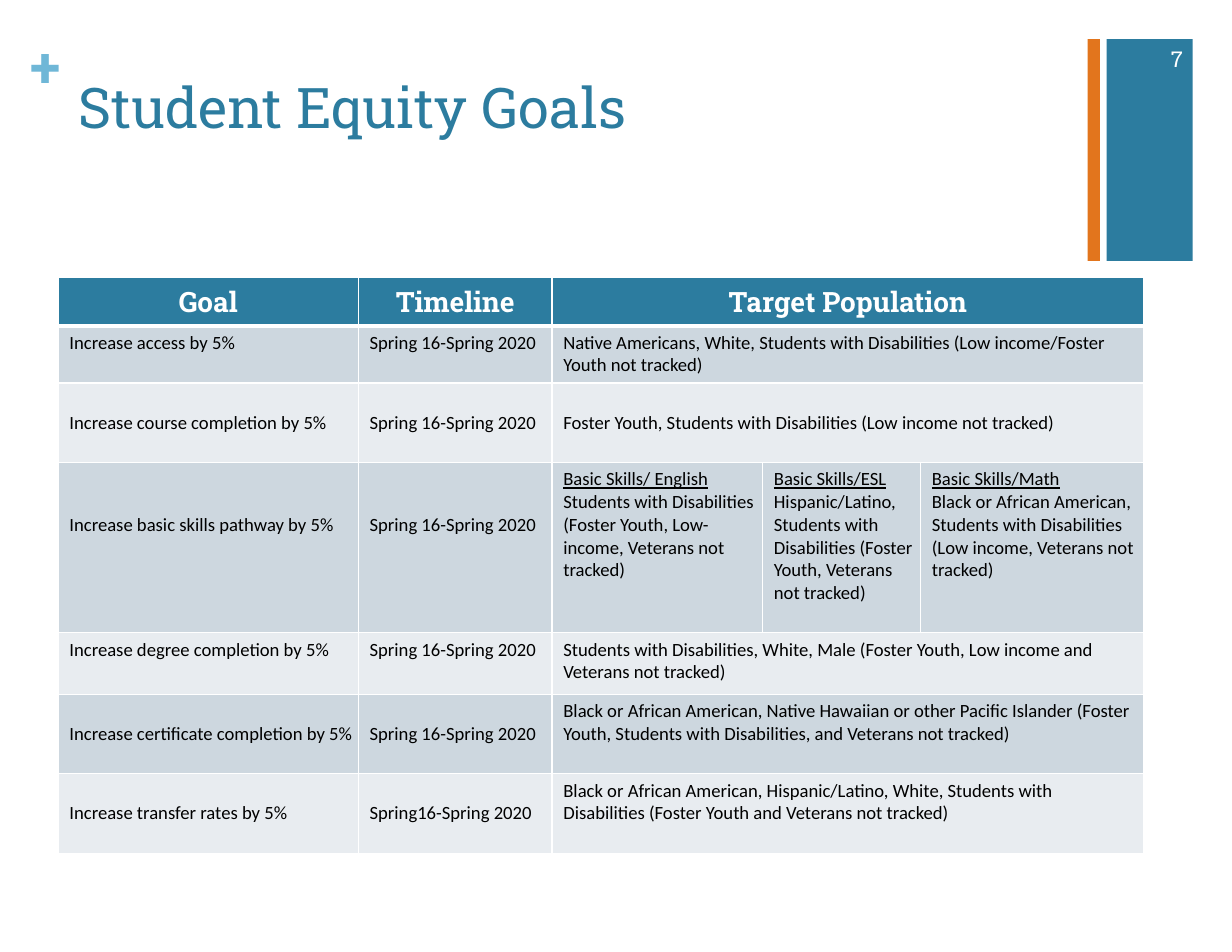
from dataclasses import dataclass

from lxml import etree
from pptx import Presentation
from pptx.dml.color import RGBColor
from pptx.enum.shapes import MSO_SHAPE
from pptx.enum.text import MSO_ANCHOR, PP_ALIGN
from pptx.oxml.ns import qn
from pptx.util import Inches, Pt

RECT = MSO_SHAPE.RECTANGLE
TOP, MIDDLE = MSO_ANCHOR.TOP, MSO_ANCHOR.MIDDLE
LEFT, CENTER, RIGHT = PP_ALIGN.LEFT, PP_ALIGN.CENTER, PP_ALIGN.RIGHT


@dataclass(frozen=True)
class Theme:
    teal: str = "2C7C9F"
    sky: str = "6FB7D7"
    orange: str = "E2751D"
    white: str = "FFFFFF"
    black: str = "000000"
    bands: tuple = ("CDD7DF", "E8ECF0")
    serif: str = "Roboto Slab"
    sans: str = "Calibri"
    title: int = 36
    head: int = 18
    page: int = 14
    body: int = 12


class Deck:
    """Places elements on a grid of 110 columns by 85 rows."""

    cols, rows = 110, 85

    def __init__(self, theme):
        self.theme = theme
        self.file = Presentation()
        self.file.slide_width = Inches(11)
        self.file.slide_height = Inches(8.5)
        self.slide = self.file.slides.add_slide(self.file.slide_layouts[6])

    def across(self, n):
        return round(self.file.slide_width * n / self.cols)

    def down(self, n):
        return round(self.file.slide_height * n / self.rows)

    def area(self, x, y, w, h):
        return self.across(x), self.down(y), self.across(w), self.down(h)

    def bar(self, box, color):
        shape = self.slide.shapes.add_shape(RECT, *self.area(*box))
        shape.shadow.inherit = False
        shape.fill.solid()
        shape.fill.fore_color.rgb = RGBColor.from_string(color)
        shape.line.fill.background()

    def lay(self, frame, lines, size, font, color, align=LEFT, bold=False, under=False):
        """Fill a frame; with under, its first line is underlined."""
        frame.word_wrap = True
        for i, line in enumerate(lines):
            para = frame.paragraphs[0] if i == 0 else frame.add_paragraph()
            para.text = line
            para.alignment = align
            para.font.size = Pt(size)
            para.font.name = font
            para.font.bold = bold
            para.font.underline = under and i == 0
            para.font.color.rgb = RGBColor.from_string(color)

    def label(self, box, text, size, color, anchor=TOP, inset=None, **style):
        frame = self.slide.shapes.add_textbox(*self.area(*box)).text_frame
        frame.vertical_anchor = anchor
        if inset is not None:
            frame.margin_left = frame.margin_right = inset
            frame.margin_top = frame.margin_bottom = inset
        self.lay(frame, [text], size, self.theme.serif, color, **style)

    def edge(self, cell, base):
        props = cell._tc.get_or_add_tcPr()
        for side, width in zip("LRTB", (1, 1, 1, base)):
            line = etree.SubElement(props, qn(f"a:ln{side}"), w=str(Pt(width)))
            fill = etree.SubElement(line, qn("a:solidFill"))
            etree.SubElement(fill, qn("a:srgbClr"), val=self.theme.white)

    def table(self, x, y, widths, heights):
        box = self.area(x, y, sum(widths), sum(heights))
        grid = self.slide.shapes.add_table(len(heights), len(widths), *box).table
        for col, width in zip(grid.columns, widths):
            col.width = self.across(width)
        for row, height in zip(grid.rows, heights):
            row.height = self.down(height)
        for r, row in enumerate(grid.rows):
            for cell in row.cells:
                self.edge(cell, 3 if r == 0 else 1)
                cell.fill.solid()
                color = self.theme.teal if r == 0 else self.theme.bands[(r - 1) % 2]
                cell.fill.fore_color.rgb = RGBColor.from_string(color)
        return grid

    def save(self):
        self.file.save("out.pptx")


HEADS = ("Goal", "Timeline", "Target Population")
TERM = "Spring 16-Spring 2020"
# Goal, timeline, target groups, anchors of the three parts, row height
GOALS = (
    ("Increase access by 5%", TERM,
     ["Native Americans, White, Students with Disabilities "
      "(Low income/Foster Youth not tracked)"],
     (TOP, TOP, TOP), 5.1),
    ("Increase course completion by 5%", TERM,
     ["Foster Youth, Students with Disabilities (Low income not tracked)"],
     (MIDDLE, MIDDLE, MIDDLE), 7.1),
    ("Increase basic skills pathway by 5%", TERM,
     [("Basic Skills/ English",
       "Students with Disabilities (Foster Youth, Low-income, Veterans not tracked)"),
      ("Basic Skills/ESL",
       "Hispanic/Latino, Students with Disabilities (Foster Youth, Veterans not tracked)"),
      ("Basic Skills/Math",
       "Black or African American, Students with Disabilities "
       "(Low income, Veterans not tracked)")],
     (TOP, TOP, TOP), 15.2),
    ("Increase degree completion by 5%", TERM,
     ["Students with Disabilities, White, Male "
      "(Foster Youth, Low income and Veterans not tracked)"],
     (TOP, TOP, TOP), 5.5),
    ("Increase certificate completion by 5%", TERM,
     ["Black or African American, Native Hawaiian or other Pacific Islander "
      "(Foster Youth, Students with Disabilities, and Veterans not tracked)"],
     (MIDDLE, MIDDLE, TOP), 7.1),
    ("Increase transfer rates by 5%", "Spring16-Spring 2020",
     ["Black or African American, Hispanic/Latino, White, Students with Disabilities "
      "(Foster Youth and Veterans not tracked)"],
     (MIDDLE, MIDDLE, TOP), 7.1),
)


def main():
    theme = Theme()
    deck = Deck(theme)

    # Corner bars, plus sign, title and page number
    deck.bar((98.8, 3.5, 7.7, 19.8), theme.teal)
    deck.label((2.7, 2.8, 3.1, 12.1), "+", theme.title, theme.sky, inset=0, bold=True)
    deck.bar((97.1, 3.5, 1.1, 19.8), theme.orange)
    deck.label((6, 6, 90.9, 13.8), "Student Equity Goals", theme.title, theme.teal)
    deck.label((99.9, 3, 6.7, 4.5), "7", theme.page, theme.white, MIDDLE, align=RIGHT)

    # Table head
    heights = [4.3] + [goal[-1] for goal in GOALS]
    grid = deck.table(5.2, 24.8, (26.8, 17.3, 18.8, 14.1, 19.9), heights)
    grid.cell(0, 2).merge(grid.cell(0, 4))
    for c, head in enumerate(HEADS):
        deck.lay(grid.cell(0, c).text_frame, [head], theme.head, theme.serif,
                 theme.white, CENTER, bold=True)

    # Goal rows
    for r, (goal, term, groups, anchors, _) in enumerate(GOALS, 1):
        split = len(groups) > 1
        if not split:
            grid.cell(r, 2).merge(grid.cell(r, 4))
        parts = [[goal], [term]] + [g if split else [g] for g in groups]
        for c, lines in enumerate(parts):
            cell = grid.cell(r, c)
            cell.vertical_anchor = anchors[min(c, 2)]
            if split and c < 2:
                cell.margin_top = deck.down(4.6)
            if c == 0 or split:
                cell.margin_right = deck.across(0.5)
            deck.lay(cell.text_frame, lines, theme.body, theme.sans, theme.black,
                     under=split and c > 1)

    deck.save()


if __name__ == "__main__":
    main()
